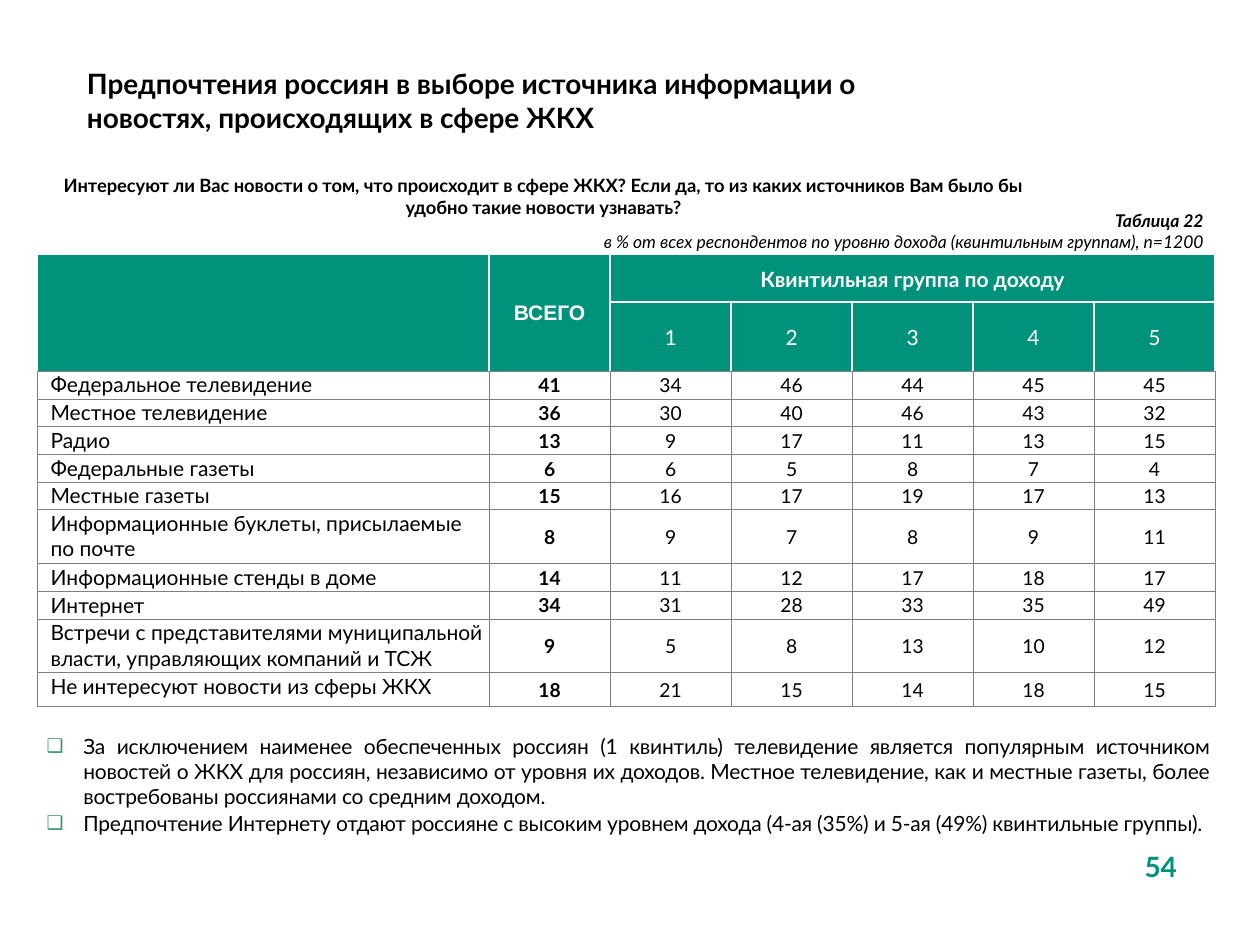
from lxml.etree import SubElement
from pptx import Presentation
from pptx.dml.color import RGBColor
from pptx.enum.text import MSO_ANCHOR, MSO_AUTO_SIZE, PP_ALIGN
from pptx.oxml.ns import qn
from pptx.util import Pt

GREEN, GREY, WHITE, BLACK = "00927B", "808080", "FFFFFF", "000000"
BULLET_GREEN = "339966"


def rgb(value):
    return RGBColor.from_string(value)


class SlideBuilder:
    font_name = "Lato"

    def __init__(self, slide):
        self.slide = slide

    def style(self, paragraph, size, color=BLACK, bold=False, italic=False,
              align=PP_ALIGN.LEFT, name=font_name):
        paragraph.alignment = align
        font = paragraph.font
        font.size, font.name = Pt(size), name
        font.bold, font.italic = bold, italic
        font.color.rgb = rgb(color)

    def place(self, holder, left, top, width, height):
        holder.left, holder.top = Pt(left), Pt(top)
        holder.width, holder.height = Pt(width), Pt(height)
        holder.text_frame.auto_size = MSO_AUTO_SIZE.NONE

    def title(self, text, *area):
        heading = self.slide.shapes.title
        self.place(heading, *area)
        heading.text_frame.text = text
        heading.text_frame.vertical_anchor = MSO_ANCHOR.MIDDLE
        self.style(heading.text_frame.paragraphs[0], 16, bold=True)

    def caption(self, lines, *area, anchor=MSO_ANCHOR.BOTTOM):
        frame = self.slide.shapes.add_textbox(*map(Pt, area)).text_frame
        frame.word_wrap = True
        frame.vertical_anchor = anchor
        frame.text = "\n".join(text for text, _ in lines)
        for paragraph, (_, look) in zip(frame.paragraphs, lines):
            self.style(paragraph, **look)

    def bullets(self, texts, *area):
        conclusions = self.slide.placeholders[1]
        self.place(conclusions, *area)
        frame = conclusions.text_frame
        frame.text = "\n".join(texts)
        for index, paragraph in enumerate(frame.paragraphs):
            paragraph.space_before = Pt(1.2 if index else 0)
            properties = paragraph._p.get_or_add_pPr()
            properties.set("marL", str(Pt(21)))
            properties.set("indent", str(-Pt(21)))
            bullet_color = SubElement(properties, qn("a:buClr"))
            SubElement(bullet_color, qn("a:srgbClr"), val=BULLET_GREEN)
            SubElement(properties, qn("a:buSzPct"), val="90000")
            SubElement(properties, qn("a:buChar"), char="❑")
            self.style(paragraph, 12, align=PP_ALIGN.JUSTIFY)
            for run in paragraph.runs:
                run._r.get_or_add_rPr().set("spc", "-10")

    def borders(self, cell, color, width, bottom=None):
        properties = cell._tc.get_or_add_tcPr()
        for side in "LRTB":
            line_color, line_width = bottom if bottom and side == "B" else (color, width)
            line = SubElement(properties, qn(f"a:ln{side}"), w=str(Pt(line_width)))
            fill = SubElement(line, qn("a:solidFill"))
            SubElement(fill, qn("a:srgbClr"), val=line_color)

    def cell(self, cell, text, is_header, bottom=None, anchor=MSO_ANCHOR.MIDDLE, **look):
        self.borders(cell, *((WHITE, 1) if is_header else (GREY, 0.25)), bottom)
        cell.fill.solid()
        cell.fill.fore_color.rgb = rgb(GREEN if is_header else WHITE)
        cell.margin_left = cell.margin_right = cell.margin_top = Pt(0.72)
        cell.margin_bottom = 0
        cell.vertical_anchor = anchor
        cell.text = str(text)
        self.style(cell.text_frame.paragraphs[0], **look)

    def table(self, header, sources, widths, heights, left, top):
        table = self.slide.shapes.add_table(
            len(heights), len(widths), Pt(left), Pt(top),
            Pt(sum(widths)), Pt(sum(heights))).table
        for column, width in zip(table.columns, widths):
            column.width = Pt(width)
        for row, height in zip(table.rows, heights):
            row.height = Pt(height)

        for r, labels in enumerate(header):
            for c, text in enumerate(labels):
                closes_header = r == 1 or c < 2
                self.cell(table.cell(r, c), text, True,
                          bottom=(GREY, 0.25) if closes_header else None,
                          size=12, color=WHITE, bold=r == 0, align=PP_ALIGN.CENTER,
                          name="Arial" if c == 1 else self.font_name)
        for start, end in (((0, 0), (1, 0)), ((0, 1), (1, 1)), ((0, 2), (0, 6))):
            table.cell(*start).merge(table.cell(*end))

        for r, (source, *shares) in enumerate(sources, len(header)):
            label = table.cell(r, 0)
            self.cell(label, source, False, anchor=MSO_ANCHOR.TOP, size=12)
            label.text_frame.paragraphs[0]._p.get_or_add_pPr().set("marL", str(Pt(7.2)))
            for c, share in enumerate(shares, 1):
                self.cell(table.cell(r, c), share, False, size=11,
                          bold=c == 1, align=PP_ALIGN.CENTER)


HEADER = [
    ["", "ВСЕГО", "Квинтильная группа по доходу", "", "", "", ""],
    ["", "", 1, 2, 3, 4, 5],
]
SOURCES = [
    ("Федеральное телевидение", 41, 34, 46, 44, 45, 45),
    ("Местное телевидение", 36, 30, 40, 46, 43, 32),
    ("Радио", 13, 9, 17, 11, 13, 15),
    ("Федеральные газеты", 6, 6, 5, 8, 7, 4),
    ("Местные газеты", 15, 16, 17, 19, 17, 13),
    ("Информационные буклеты, присылаемые по почте", 8, 9, 7, 8, 9, 11),
    ("Информационные стенды в доме", 14, 11, 12, 17, 18, 17),
    ("Интернет", 34, 31, 28, 33, 35, 49),
    ("Встречи с представителями муниципальной власти, управляющих компаний и ТСЖ",
     9, 5, 8, 13, 10, 12),
    ("Не интересуют новости из сферы ЖКХ", 18, 21, 15, 14, 18, 15),
]
ONE_LINE, TWO_LINES = 15.85, 30.7
ROW_HEIGHTS = [27, 39.5, *[ONE_LINE] * 5, TWO_LINES, *[ONE_LINE] * 2, TWO_LINES, 19.5]
COLUMN_WIDTHS = [258.5] + [69.15] * 6


def main():
    presentation = Presentation()
    presentation.slide_width, presentation.slide_height = Pt(720), Pt(540)
    builder = SlideBuilder(presentation.slides.add_slide(presentation.slide_layouts[1]))

    builder.caption([("54", dict(size=16, color=GREEN, bold=True, align=PP_ALIGN.CENTER))],
                    632, 481.7, 62.6, 37.4, anchor=MSO_ANCHOR.TOP)
    builder.table(HEADER, SOURCES, COLUMN_WIDTHS, ROW_HEIGHTS, 21, 145.5)
    builder.title("Предпочтения россиян в выборе источника информации о новостях, "
                  "происходящих в сфере ЖКХ", 42.5, 31.7, 499, 51)
    builder.caption([("Интересуют ли Вас новости о том, что происходит в сфере ЖКХ? "
                      "Если да, то из каких источников Вам было бы удобно такие новости узнавать?",
                      dict(size=10.5, bold=True, align=PP_ALIGN.CENTER))],
                    23, 94.3, 575.3, 33.8)
    note = dict(size=10, italic=True, align=PP_ALIGN.RIGHT)
    builder.caption([("Таблица 22", dict(note, bold=True)),
                     ("в % от всех респондентов по уровню дохода (квинтильным группам), n=1200",
                      note)],
                    -13.7, 116, 708.5, 31.7)
    builder.bullets([
        "За исключением наименее обеспеченных россиян (1 квинтиль) телевидение является "
        "популярным источником новостей о ЖКХ для россиян, независимо от уровня их доходов. "
        "Местное телевидение, как и местные газеты, более востребованы россиянами "
        "со средним доходом.",
        "Предпочтение Интернету отдают россияне с высоким уровнем дохода "
        "(4-ая (35%) и 5-ая (49%) квинтильные группы).",
    ], 19.4, 415.4, 679.7, 53.3)

    presentation.save("out.pptx")


if __name__ == "__main__":
    main()
